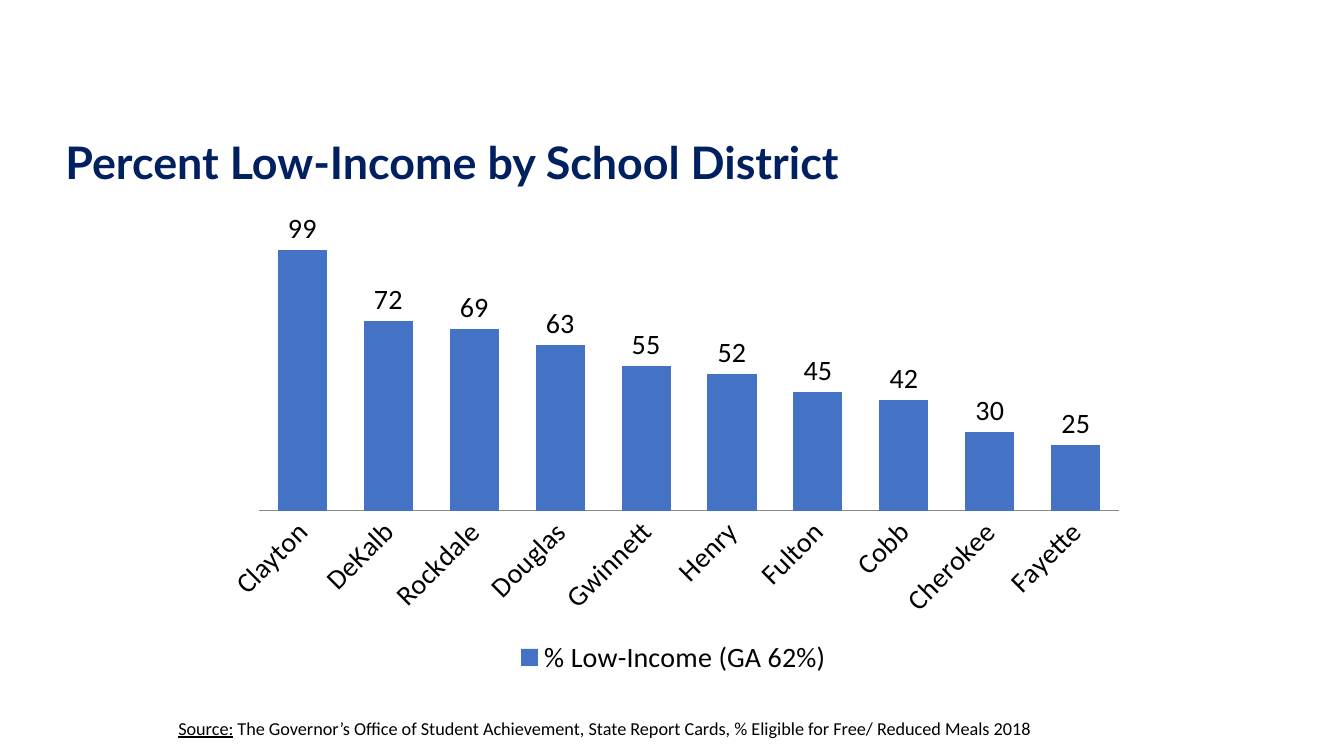
import pptx
import pptx.chart.data
import pptx.dml.color
import pptx.enum.chart
import pptx.enum.text
import pptx.util

RGB = pptx.dml.color.RGBColor
NAVY = RGB(0x00, 0x20, 0x60)
BLUE = RGB(0x44, 0x72, 0xC4)
GREY = RGB(0x89, 0x89, 0x89)
BLACK = RGB(0x00, 0x00, 0x00)

RATES = {
    "Clayton": 99, "DeKalb": 72, "Rockdale": 69, "Douglas": 63,
    "Gwinnett": 55, "Henry": 52, "Fulton": 45, "Cobb": 42,
    "Cherokee": 30, "Fayette": 25,
}


def px(count):
    """Turn px, 100 to the inch, into EMU."""
    return pptx.util.Emu(count * 9144)


class Deck:
    head = "Lato"
    body = "Calibri"

    def __init__(self, wide, high):
        self.file = pptx.Presentation()
        self.file.slide_width = px(wide)
        self.file.slide_height = px(high)
        self.slide = self.file.slides.add_slide(self.file.slide_layouts[6])

    def style(self, font, name, size, color):
        font.name = name
        font.size = pptx.util.Pt(size)
        font.color.rgb = color

    def text(self, box, parts, name, size, color, space, anchor):
        """Add one line of text and return its runs, one for each part."""
        frame = self.slide.shapes.add_textbox(*map(px, box)).text_frame
        frame.word_wrap = True
        frame.vertical_anchor = anchor
        line = frame.paragraphs[0]
        line.line_spacing = space
        for part in parts:
            run = line.add_run()
            run.text = part
            self.style(run.font, name, size, color)
        return line.runs

    def bars(self, box, title, rates, size):
        data = pptx.chart.data.CategoryChartData(number_format="0")
        data.categories = list(rates)
        data.add_series(title, list(rates.values()))
        kind = pptx.enum.chart.XL_CHART_TYPE.COLUMN_CLUSTERED
        chart = self.slide.shapes.add_chart(kind, *map(px, box), data).chart
        self.style(chart.font, self.body, size, BLACK)
        chart.has_title = False
        chart.has_legend = True
        chart.legend.position = pptx.enum.chart.XL_LEGEND_POSITION.BOTTOM
        chart.legend.include_in_layout = False

        names = chart.category_axis
        names.major_tick_mark = pptx.enum.chart.XL_TICK_MARK.NONE
        names.format.line.color.rgb = GREY
        self.style(names.tick_labels.font, self.body, size, BLACK)
        names._element.txPr.bodyPr.set("rot", str(-45 * 60000))

        scale = chart.value_axis
        scale.visible = False
        scale.has_major_gridlines = False
        scale.minimum_scale = 0
        scale.maximum_scale = 120

        plot = chart.plots[0]
        plot.gap_width = 75
        plot.vary_by_categories = False
        fill = plot.series[0].format.fill
        fill.solid()
        fill.fore_color.rgb = BLUE
        plot.has_data_labels = True
        labels = plot.data_labels
        labels.show_value = True
        labels.number_format = "0"
        labels.number_format_is_linked = False
        labels.position = pptx.enum.chart.XL_LABEL_POSITION.OUTSIDE_END
        self.style(labels.font, self.body, size, BLACK)


def main():
    anchor = pptx.enum.text.MSO_ANCHOR
    deck = Deck(1333, 750)
    title = deck.text((55, 91, 1224, 145),
                      ["Percent Low-Income by School District"],
                      deck.head, 32, NAVY, 0.9, anchor.MIDDLE)
    title[0].font.bold = True
    deck.bars((208, 183, 920, 492), "% Low-Income (GA 62%)", RATES, 20)
    source = deck.text(
        (167, 714, 961, 25),
        ["Source:", " The Governor’s Office of Student Achievement, "
         "State Report Cards, % Eligible for Free/ Reduced Meals 2018"],
        deck.body, 13, BLACK, 0.6, anchor.TOP)
    source[0].font.underline = True
    deck.file.save("out.pptx")


if __name__ == "__main__":
    main()
